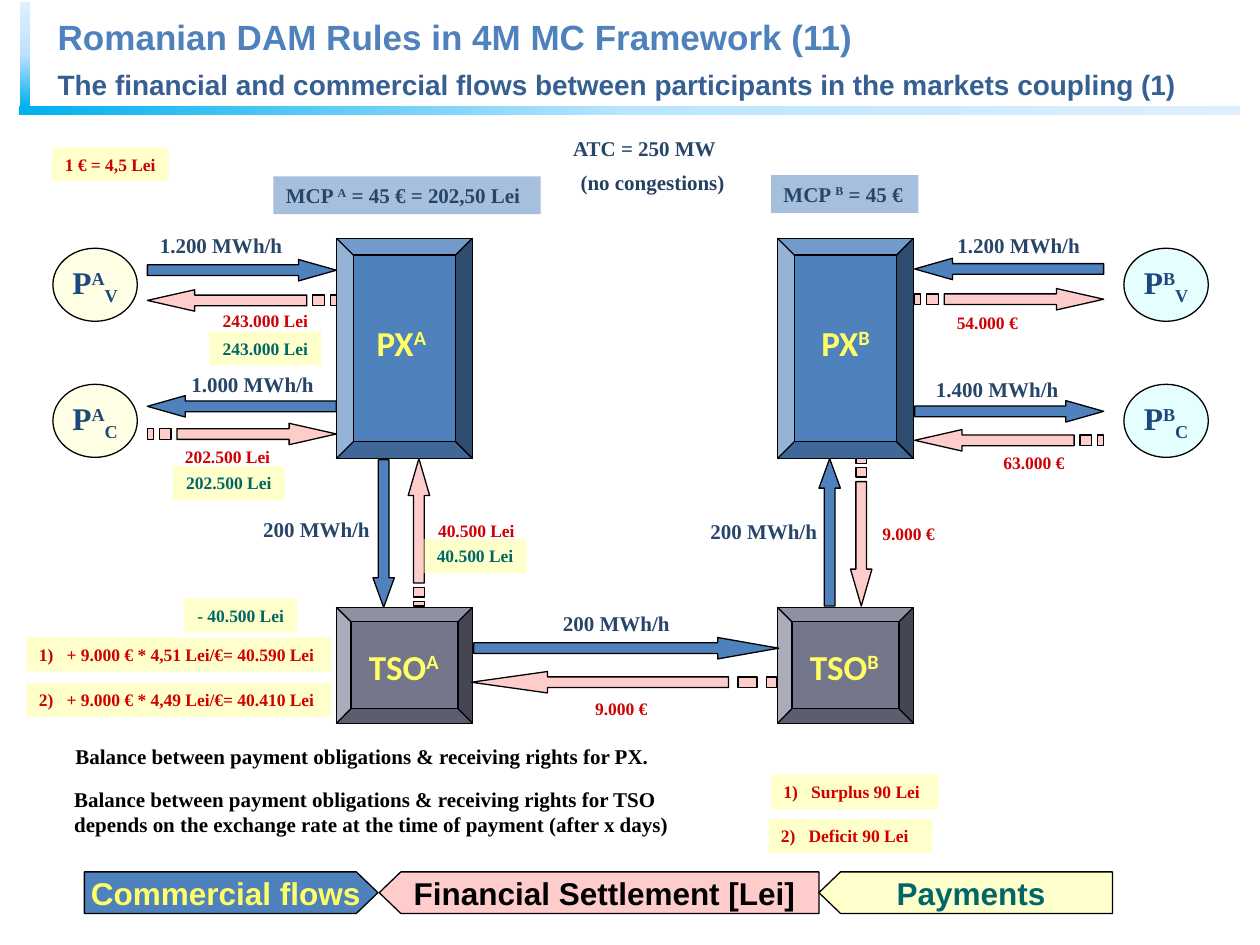
"""Build the slide on financial and commercial flows in market coupling."""
from copy import deepcopy

from lxml.etree import SubElement
from pptx import Presentation
from pptx.dml.color import RGBColor
from pptx.enum.shapes import MSO_SHAPE
from pptx.enum.text import MSO_ANCHOR, MSO_AUTO_SIZE, PP_ALIGN
from pptx.oxml.ns import qn
from pptx.util import Cm, Pt

CM_PER_INCH = 2.54
BLUE, PINK, GREY, YELLOW = "4F81BD", "FFCCCC", "74768C", "FFFF66"
NAVY, RED, GREEN, BLACK = "274569", "D00000", "006666", "000000"
PALE_YELLOW, WHITE = "FFFF99", "FFFFFF"
SERIF = "Times New Roman"
HEIGHT = 0.17
TAB_STOP = 0.22

PARTICIPANTS = [
    (left, top, fill, ["P", (market, 30), (role, -25)])
    for left, fill, market in [(0.42, "FFFFCC", "A"), (8.92, "CCFFFF", "B")]
    for top, role in [(1.97, "V"), (3.05, "C")]
]
INSTITUTIONS = [
    ((2.67, 1.89, 1.08, 1.75), BLUE, (2.89, 2.5, 0.61, 0.44), ["PX", ("A", 30)]),
    ((6.17, 1.89, 1.08, 1.75), BLUE, (6.42, 2.5, 0.6, 0.44), ["PX", ("B", 30)]),
    ((2.67, 4.82, 1.08, 0.92), GREY, (2.83, 5.07, 0.77, 0.44), ["TSO", ("A", 30)]),
    ((6.17, 4.82, 1.08, 0.92), GREY, (6.33, 5.07, 0.77, 0.44), ["TSO", ("B", 30)]),
]
MONEY_ARROWS = [
    (1.17, 3.36, 1.5, False, 0), (7.26, 2.29, 1.5, False, 0),
    (1.17, 2.3, 1.5, True, 0), (7.26, 3.41, 1.5, True, 0),
    (2.74, 4.14, 1.17, False, 270), (6.25, 4.14, 1.17, False, 90),
    (3.74, 5.33, 2.42, True, 0),
]
ENERGY_ARROWS = [
    (1.17, 2.06, 1.5, False, 0), (7.26, 3.18, 1.5, False, 0),
    (1.17, 3.14, 1.5, True, 0), (7.26, 2.05, 1.5, True, 0),
    (6, 4.14, 1.17, False, 270), (2.46, 4.15, 1.17, False, 90),
    (3.76, 5.06, 2.42, False, 0),
]
LEGEND = [
    (0.67, 2.33, False, BLUE, "Commercial flows", YELLOW),
    (3.01, 3.49, True, PINK, "Financial Settlement [Lei]", BLACK),
    (6.5, 2.33, True, "FFFFCC", "Payments", GREEN),
]
AMOUNTS = [
    (1.66, 2.41, 0.89, "243.000 Lei"), (1.36, 3.49, 0.89, "202.500 Lei"),
    (3.37, 4.08, 0.82, "40.500 Lei"), (7.49, 2.43, 0.69, "54.000 €"),
    (7.86, 3.54, 0.69, "63.000 €"), (4.62, 5.49, 0.62, "9.000 €"),
    (6.9, 4.1, 0.62, "9.000 €"),
]
NOTES = [
    (1.66, 2.63, 0.89, "243.000 Lei", GREEN), (1.37, 3.7, 0.89, "202.500 Lei", GREEN),
    (3.36, 4.28, 0.82, "40.500 Lei", GREEN), (1.46, 4.75, 0.9, "- 40.500 Lei", GREEN),
    (0.21, 5.06, 2.42, "1)\t+ 9.000 € * 4,51 Lei/€= 40.590 Lei", RED),
    (0.21, 5.42, 2.42, "2)\t+ 9.000 € * 4,49 Lei/€= 40.410 Lei", RED),
    (6.12, 6.15, 1.33, "1)\tSurplus 90 Lei", RED),
    (6.1, 6.5, 1.3, "2)\tDeficit 90 Lei", RED),
    (0.41, 1.17, 0.93, "1 € = 4,5 Lei", RED),
]
VOLUMES = [
    (1.17, 1.8, 1.18, "1.200 MWh/h"), (1.42, 2.9, 1.18, "1.000 MWh/h"),
    (7.5, 1.8, 1.18, "1.200 MWh/h"), (7.33, 2.94, 1.18, "1.400 MWh/h"),
    (4.37, 4.8, 1.06, "200 MWh/h"), (1.99, 4.05, 1.06, "200 MWh/h"),
    (5.54, 4.07, 1.06, "200 MWh/h"), (4.45, 1.03, 1.35, "ATC = 250 MW"),
]
PRICES = [
    (2.17, 1.4, 2.12, ["MCP ", ("A", 30), " = 45 € = 202,50 Lei"]),
    (6.12, 1.39, 1.17, ["MCP ", ("B", 30), " = 45 €"]),
]
CONCLUSIONS = [
    ((0.5, 5.85, 4.93, 0.3), False,
     "Balance between payment obligations & receiving rights for PX."),
    ((0.49, 6.19, 5.05, 0.51), True,
     "Balance between payment obligations & receiving rights for TSO "
     "depends on the exchange rate at the time of payment (after x days)"),
]
TITLES = [
    ("Romanian DAM Rules in 4M MC Framework (11)", 20, BLUE, 0),
    ("The financial and commercial flows between participants in the markets coupling (1)",
     16, "376092", 6),
]
BARS = [
    ((0.15, 0.84, 9.69, 0.07), 0, ["00B0F0", "B9E5FF", "E0EFFF"]),
    ((-0.22, 0.39, 0.83, 0.08), 270, ["00B0F0", "BFE1FF", "E0EFFF"]),
]
MONEY_CONTOURS = [
    [(3 / 4, 0), (3 / 4, 1 / 4), (5 / 32, 1 / 4), (5 / 32, 3 / 4), (3 / 4, 3 / 4), (3 / 4, 1), (1, 1 / 2)],
    [(1 / 16, 1 / 4), (1 / 16, 3 / 4), (1 / 8, 3 / 4), (1 / 8, 1 / 4)],
    [(0, 1 / 4), (0, 3 / 4), (1 / 32, 3 / 4), (1 / 32, 1 / 4)],
]


def length(inches):
    return Cm(CM_PER_INCH * inches)


def color(value):
    return RGBColor.from_string(value)


def paint(shape, fill, opacity=100):
    shape.fill.solid()
    shape.fill.fore_color.rgb = color(fill)
    if opacity < 100:
        tint = shape._element.spPr.find(f"{qn('a:solidFill')}/{qn('a:srgbClr')}")
        SubElement(tint, qn("a:alpha"), val=str(opacity * 1000))


def outline(shape, fill, opacity=100):
    paint(shape, fill, opacity)
    shape.line.color.rgb = color(BLACK)
    shape.line.width = Pt(0.75)
    shape.shadow.inherit = False


def write(paragraph, runs, size, ink, font=SERIF, align=PP_ALIGN.LEFT):
    paragraph.alignment = align
    if "\t" in runs[0]:
        tabs = SubElement(paragraph._p.get_or_add_pPr(), qn("a:tabLst"))
        SubElement(tabs, qn("a:tab"), pos=str(length(TAB_STOP)), algn="l")
    paragraph.font.size, paragraph.font.name = Pt(size), font
    paragraph.font.bold = True
    paragraph.font.color.rgb = color(ink)
    for item in runs:
        text, baseline = item if isinstance(item, tuple) else (item, 0)
        run = paragraph.add_run()
        run.text = text
        if baseline:
            run._r.get_or_add_rPr().set("baseline", str(baseline * 1000))


def add_shape(slide, kind, box, fill, opacity=100, mirrored=False, rotation=0):
    shape = slide.shapes.add_shape(kind, *map(length, box))
    outline(shape, fill, opacity)
    shape.rotation = rotation
    if mirrored:
        shape._element.spPr.find(qn("a:xfrm")).set("flipH", "1")
    return shape


def add_label(slide, box, runs, size, ink, font=SERIF, align=PP_ALIGN.LEFT,
              fill=None, opacity=100, wrap=False):
    shape = slide.shapes.add_textbox(*map(length, box))
    shape.text_frame.word_wrap = wrap
    shape.text_frame.auto_size = MSO_AUTO_SIZE.SHAPE_TO_FIT_TEXT
    if fill:
        paint(shape, fill, opacity)
    write(shape.text_frame.paragraphs[0], runs, size, ink, font, align)


def write_inside(shape, runs, ink, font):
    frame = shape.text_frame
    frame.word_wrap, frame.vertical_anchor = False, MSO_ANCHOR.MIDDLE
    write(frame.paragraphs[0], runs, 18, ink, font, PP_ALIGN.CENTER)


def add_money_arrow(slide, left, top, span, mirrored, rotation):
    contours = [
        [(length(left + span * (1 - x if mirrored else x)), length(top + HEIGHT * y)) for x, y in contour]
        for contour in MONEY_CONTOURS
    ]
    builder = slide.shapes.build_freeform(*contours[0][0])
    for contour in contours:
        if contour is not contours[0]:
            builder.move_to(*contour[0])
        builder.add_line_segments(contour[1:], close=True)
    shape = builder.convert_to_shape()
    outline(shape, PINK)
    shape.rotation = rotation


def add_header(slide):
    for box, rotation, stops in BARS:
        bar = add_shape(slide, MSO_SHAPE.RECTANGLE, box, WHITE, rotation=rotation)
        bar.line.fill.background()
        bar.fill.gradient()
        bar.fill.gradient_angle = 0
        stop_list = bar._element.spPr.find(f"{qn('a:gradFill')}/{qn('a:gsLst')}")
        stop_list.append(deepcopy(stop_list[0]))
        for index, (stop, value) in enumerate(zip(bar.fill.gradient_stops, stops)):
            stop.color.rgb, stop.position = color(value), index / 2
    title = slide.shapes.add_textbox(*map(length, (0.36, 0.07, 9.67, 0.75)))
    paint(title, WHITE)
    frame = title.text_frame
    frame.word_wrap = True
    for text, size, ink, gap in TITLES:
        paragraph = frame.add_paragraph() if gap else frame.paragraphs[0]
        if gap:
            paragraph.space_before = Pt(gap)
        write(paragraph, [text], size, ink, "Arial")


def main():
    presentation = Presentation()
    presentation.slide_width, presentation.slide_height = length(10), length(7.5)
    slide = presentation.slides.add_slide(presentation.slide_layouts[6])
    for left, top, fill, runs in PARTICIPANTS:
        shape = add_shape(slide, MSO_SHAPE.OVAL, (left, top, 0.67, 0.58), fill, 50)
        frame = shape.text_frame
        frame.margin_left = frame.margin_right = frame.margin_top = frame.margin_bottom = 0
        write_inside(shape, runs, "1F497D", SERIF)
    for box, fill, label_box, runs in INSTITUTIONS:
        add_shape(slide, MSO_SHAPE.BEVEL, box, fill)
        add_label(slide, label_box, runs, 20, YELLOW, "Calibri")
    for arrow in MONEY_ARROWS:
        add_money_arrow(slide, *arrow)
    for left, top, span, mirrored, rotation in ENERGY_ARROWS:
        arrow = add_shape(slide, MSO_SHAPE.RIGHT_ARROW, (left, top, span, HEIGHT), BLUE, 100, mirrored, rotation)
        arrow.adjustments[1] = span / 4 / HEIGHT * 0.8
    for left, width, mirrored, fill, text, ink in LEGEND:
        plate = add_shape(slide, MSO_SHAPE.PENTAGON, (left, 6.92, width, 0.33), fill, mirrored=mirrored)
        plate.adjustments[0] = 0.52
        write_inside(plate, [text], ink, "Arial")
    for left, top, width, text in AMOUNTS:
        add_label(slide, (left, top, width, 0.27), [text], 10, RED, align=PP_ALIGN.CENTER)
    for left, top, width, text, ink in NOTES:
        align = PP_ALIGN.LEFT if "\t" in text else PP_ALIGN.CENTER
        add_label(slide, (left, top, width, 0.27), [text], 10, ink, SERIF, align, PALE_YELLOW, 50)
    for left, top, width, text in VOLUMES:
        add_label(slide, (left, top, width, 0.3), [text], 12, NAVY)
    for left, top, width, runs in PRICES:
        add_label(slide, (left, top, width, 0.3), runs, 12, NAVY, fill=BLUE, opacity=50)
    for box, wrap, text in CONCLUSIONS:
        add_label(slide, box, [text], 12, BLACK, wrap=wrap)
    add_header(slide)
    add_label(slide, (4.51, 1.3, 1.36, 0.3), ["(no congestions)"], 12, "254061", fill=WHITE)
    presentation.save("out.pptx")


if __name__ == "__main__":
    main()
